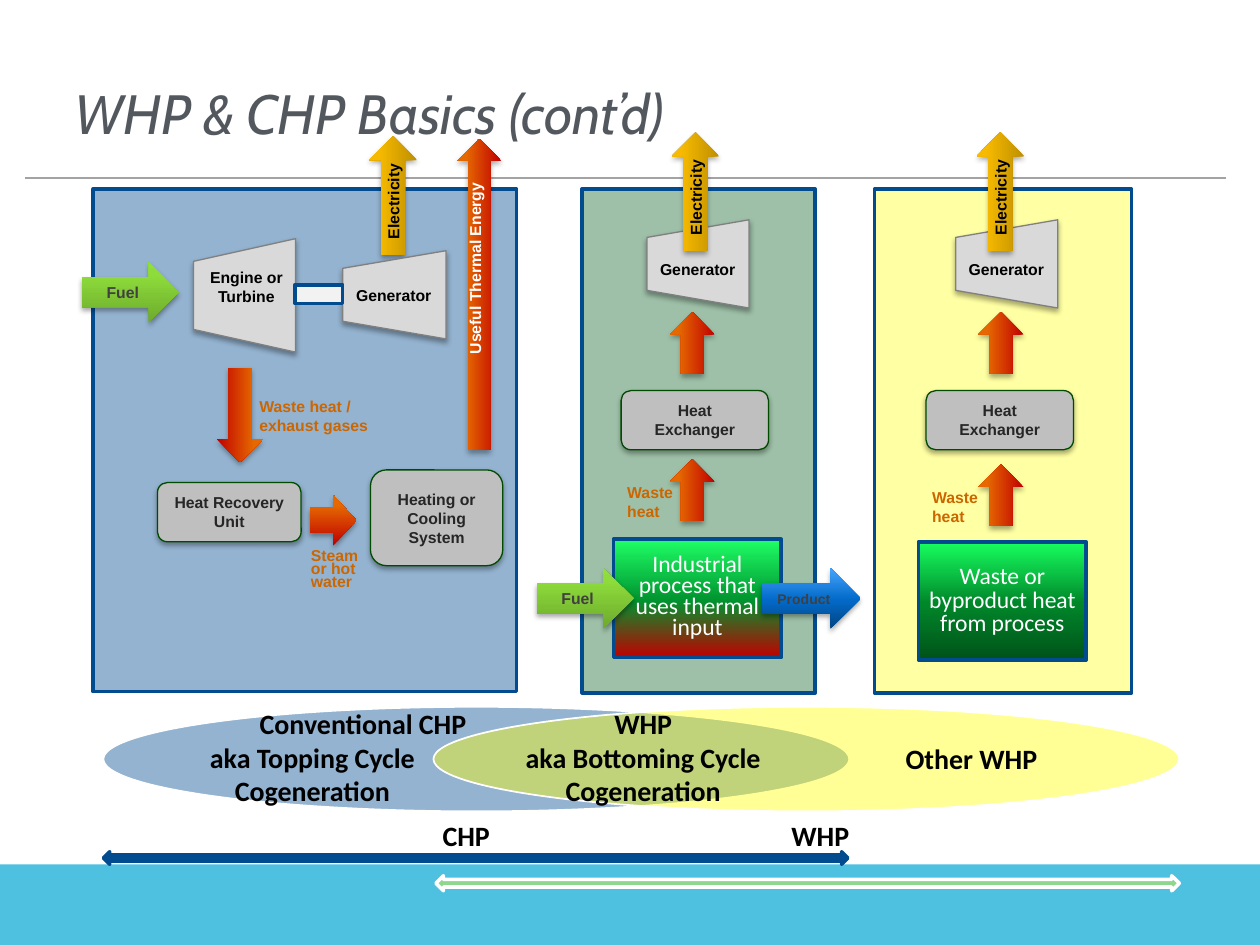
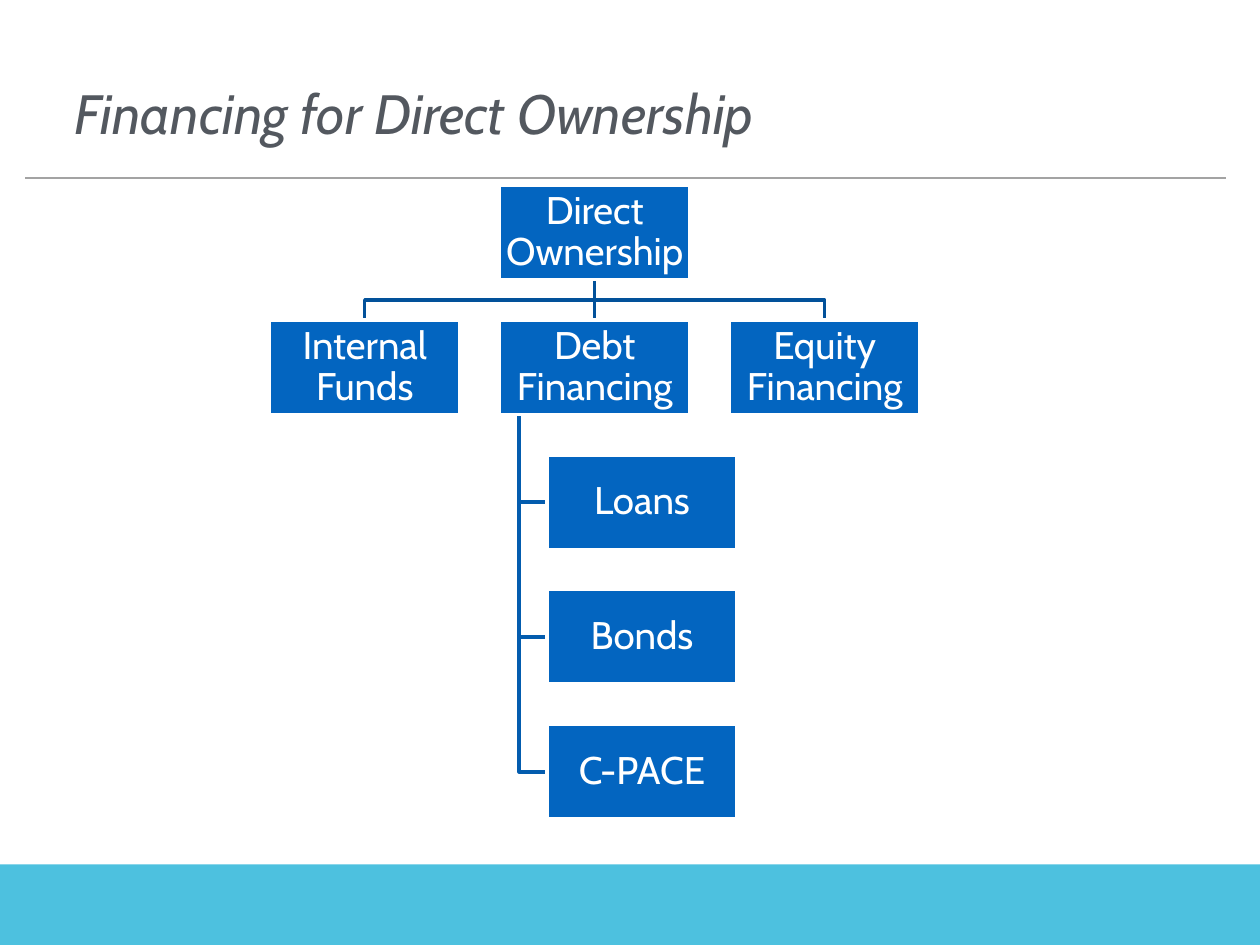
from dataclasses import dataclass
from typing import NamedTuple

from lxml.etree import SubElement
from pptx import Presentation
from pptx.dml.color import RGBColor
from pptx.enum.shapes import MSO_CONNECTOR, MSO_SHAPE
from pptx.enum.text import MSO_ANCHOR, PP_ALIGN
from pptx.oxml.ns import qn
from pptx.util import Inches, Pt


@dataclass(frozen=True)
class Theme:
    """Colours, gradients, fonts and type sizes of the deck."""
    band: str = "4DC1DF"
    rule: str = "A3A3A3"
    title: str = "53585F"
    white: str = "FFFFFF"
    black: str = "000000"
    navy: str = "024C90"
    edge: str = "024B8E"
    forest: str = "005C1C"
    yellow: str = "FFFF00"
    machine: str = "D9D9D9"
    machine_edge: str = "808080"
    unit: str = "BFBFBF"
    unit_edge: str = "004B00"
    unit_text: str = "262626"
    arrow_text: str = "404040"
    heat_text: str = "CC6600"
    shaft: str = "F2F2F2"
    node: str = "0365C0"
    trunk: str = "02519A"
    twig: str = "035CAE"
    heat: tuple = ((0, "C00000"), (80, "E56800"), (100, "E66800"))
    power: tuple = ((0, "BE8F00"), (80, "F7BA00"), (100, "F8BB00"))
    fuel: tuple = ((0, "6DAA2D"), (80, "8EDC3B"), (100, "8FE038"))
    product: tuple = ((0, "024481"), (48, "036AC9"), (100, "45A4FC"))
    industry: tuple = ((0, "C00000"), (48, "00932F"), (100, "1FFF66"))
    byproduct: tuple = ((0, "005219"), (48, "00872A"), (100, "17FF5F"))
    display: str = "Cabin"
    label: str = "Arial"
    body: str = "Calibri"
    title_size: float = 31.6
    node_size: float = 22
    cycle_size: float = 16
    process_size: float = 13.5
    label_size: float = 9
    small_size: float = 8


THEME = Theme()


class Box(NamedTuple):
    """A frame in inches."""
    left: float
    top: float
    width: float
    height: float

    def within(self, left, top, width, height):
        """Return a frame measured from this one's top left corner."""
        return Box(self.left + left, self.top + top, width, height)

    def emu(self):
        """Return the four lengths for a shape call."""
        return [Inches(value) for value in self]


def write(shape, text, size=THEME.label_size, font=THEME.label, color=THEME.black,
          bold=False, italic=False, align=PP_ALIGN.CENTER, first_align=None,
          anchor=MSO_ANCHOR.TOP, spacing=None, insets=(0.1, 0.05), wrap=True):
    """Fill a shape with text, one paragraph a line."""
    frame = shape.text_frame
    frame.word_wrap = wrap
    frame.vertical_anchor = anchor
    frame.margin_left = frame.margin_right = Inches(insets[0])
    frame.margin_top = frame.margin_bottom = Inches(insets[1])
    for index, line in enumerate(text.split("\n")):
        para = frame.add_paragraph() if index else frame.paragraphs[0]
        para.alignment = first_align if first_align and not index else align
        if spacing:
            para.line_spacing = spacing
        span = para.add_run()
        span.text = line
        span.font.name, span.font.size = font, Pt(size)
        span.font.bold, span.font.italic = bold, italic
        span.font.color.rgb = RGBColor.from_string(color)


def add_text(page, box, text, rotation=0, **style):
    """Add a text box."""
    shape = page.shapes.add_textbox(*box.emu())
    shape.rotation = rotation
    write(shape, text, **style)


def paint(shape, fill, alpha=None):
    """Fill a shape with a colour or with gradient stops rising upwards."""
    if isinstance(fill, str):
        shape.fill.solid()
        shape.fill.fore_color.rgb = RGBColor.from_string(fill)
        if alpha:
            color = next(shape._element.spPr.iter(qn("a:srgbClr")))
            SubElement(color, qn("a:alpha"), val=str(alpha * 1000))
        return
    shape.fill.gradient()
    shape.fill.gradient_angle = 90
    stops = next(shape._element.spPr.iter(qn("a:gsLst")))
    for stop in list(stops):
        stops.remove(stop)
    for position, color in fill:
        stop = SubElement(stops, qn("a:gs"), pos=str(position * 1000))
        SubElement(stop, qn("a:srgbClr"), val=color)


def outline(shape, color, width):
    """Give a shape or connector a solid line."""
    shape.line.color.rgb = RGBColor.from_string(color)
    shape.line.width = Pt(width)


def add_shape(page, kind, box, fill, alpha=None, edge=None, edge_width=2,
              rotation=0, shadow=False, text=None, **style):
    """Add a preset shape with its fill, line, shadow and text."""
    shape = page.shapes.add_shape(kind, *box.emu())
    shape.rotation = rotation
    paint(shape, fill, alpha)
    if edge:
        outline(shape, edge, edge_width)
    else:
        shape.line.fill.background()
    shape.shadow.inherit = False
    if shadow:
        effects = shape._element.spPr.find(qn("a:effectLst"))
        cast = SubElement(effects, qn("a:outerShdw"), blurRad=str(Pt(3.1)),
                          dist=str(Pt(1.8)), dir="5400000", rotWithShape="0")
        color = SubElement(cast, qn("a:srgbClr"), val=THEME.black)
        SubElement(color, qn("a:alpha"), val="35000")
    if text:
        write(shape, text, anchor=MSO_ANCHOR.MIDDLE, **style)
    return shape


def add_line(page, start, end, color, width):
    """Add a straight connector without shadow."""
    line = page.shapes.add_connector(
        MSO_CONNECTOR.STRAIGHT, *[Inches(value) for value in (*start, *end)])
    outline(line, color, width)
    SubElement(line._element.spPr, qn("a:effectLst"))
    return line


def add_arrow(page, box, fill, rotation=0, text=None, **style):
    """Add a shaded block arrow."""
    add_shape(page, MSO_SHAPE.RIGHT_ARROW, box, fill, rotation=rotation,
              shadow=True, text=text, bold=True, wrap=False, **style)


def add_electricity(page, box):
    """Add the upward arrow for generated power."""
    add_arrow(page, box, THEME.power, 270, "Electricity")


def add_fuel(page, box):
    """Add the arrow for fuel coming in."""
    add_arrow(page, box, THEME.fuel, text="Fuel", color=THEME.arrow_text)


def add_machine(page, box):
    """Add a trapezoid that widens to the right."""
    add_shape(page, MSO_SHAPE.FLOWCHART_MANUAL_OPERATION, box, THEME.machine,
              edge=THEME.machine_edge, edge_width=0.75, rotation=90, shadow=True)


def add_unit(page, box, text):
    """Add a rounded equipment box."""
    add_shape(page, MSO_SHAPE.ROUNDED_RECTANGLE, box, THEME.unit, edge=THEME.unit_edge,
              edge_width=0.75, shadow=True, text=text, color=THEME.unit_text, bold=True)


def add_heat_label(page, box, text, **style):
    """Add an orange label beside a heat arrow."""
    add_text(page, box, text, color=THEME.heat_text, bold=True,
             align=PP_ALIGN.LEFT, **style)


def add_panel(page, box, fill, alpha):
    """Add the tinted background of a system."""
    add_shape(page, MSO_SHAPE.RECTANGLE, box, fill, alpha, edge=THEME.edge)


def topping_panel(page, box):
    """Draw conventional CHP from fuel to thermal energy."""
    add_panel(page, box, THEME.navy, 42)
    add_unit(page, box.within(0.51, 2.33, 1.14, 0.47), "Heat Recovery Unit")
    add_unit(page, box.within(2.2, 2.23, 1.05, 0.76), "Heating or Cooling System")
    add_arrow(page, box.within(1.72, 2.43, 0.37, 0.4), THEME.heat)
    add_heat_label(page, box.within(1.63, 2.83, 0.64, 0.44), "Steam or hot water",
                   spacing=Pt(7.5))
    add_electricity(page, box.within(1.91, -0.14, 0.94, 0.38))
    add_machine(page, box.within(2.04, 0.43, 0.7, 0.82))
    add_text(page, box.within(1.97, 0.72, 0.83, 0.25), "Generator", bold=True)
    add_machine(page, box.within(0.75, 0.44, 0.9, 0.81))
    add_text(page, box.within(0.69, 0.58, 1.05, 0.4), "Engine or Turbine", bold=True)
    add_fuel(page, box.within(-0.09, 0.58, 0.77, 0.48))
    add_heat_label(page, box.within(1.22, 1.6, 1.38, 0.4), "Waste heat / exhaust gases")
    add_arrow(page, box.within(0.79, 1.61, 0.75, 0.37), THEME.heat, 90)
    add_arrow(page, box.within(1.83, 0.66, 2.47, 0.35), THEME.heat, 270)
    add_shape(page, MSO_SHAPE.RECTANGLE, box.within(1.6, 0.76, 0.38, 0.15),
              THEME.shaft, edge=THEME.edge)
    add_text(page, box.within(2.23, 0.48, 1.65, 0.21), "Useful Thermal Energy", 270,
             color=THEME.white, bold=True, align=PP_ALIGN.LEFT, spacing=Pt(7.5))


def waste_heat_panel(page, box, axis, fill, alpha, source, source_fill, spacing,
                     nudge=0, drop=0):
    """Draw a heat source, exchanger and generator stacked around an axis."""
    add_panel(page, box, fill, alpha)
    add_machine(page, box.within(axis - 0.33 + nudge, 0.19, 0.7, 0.81))
    add_unit(page, box.within(axis - 0.59, 1.6, 1.17, 0.47), "Heat Exchanger")
    add_text(page, box.within(axis - 0.38 + nudge, 0.51, 0.84, 0.25), "Generator",
             bold=True, align=PP_ALIGN.LEFT)
    add_heat_label(page, box.within(axis - 0.64, 2.28 + drop, 0.67, 0.4), "Waste heat")
    for top in (1.04, 2.21 + drop):
        add_arrow(page, box.within(axis - 0.27 + nudge, top, 0.49, 0.36), THEME.heat, 270)
    add_shape(page, MSO_SHAPE.RECTANGLE, box.within(axis - 0.65, 2.78 + drop / 2, 1.33, 0.94),
              source_fill, edge=THEME.edge, text=source, size=THEME.process_size,
              font=THEME.body, color=THEME.white, spacing=Pt(spacing), insets=(0.07, 0.04))
    add_electricity(page, box.within(axis - 0.47, -0.17, 0.94, 0.38))


def cycle_overlap(page, box):
    """Draw the overlapping ellipses and the spans below them."""
    style = dict(size=THEME.cycle_size, font=THEME.body, bold=True)
    for left, fill, alpha in ((0, THEME.navy, 42), (2.62, THEME.yellow, 41)):
        add_shape(page, MSO_SHAPE.OVAL, box.within(left, 0, 5.92, 0.83), fill, alpha,
                  edge=THEME.white, edge_width=1)
    add_text(page, box.within(0.34, 0.02, 2.64, 0.76),
             "Conventional CHP\naka Topping Cycle Cogeneration",
             first_align=PP_ALIGN.RIGHT, anchor=MSO_ANCHOR.MIDDLE, **style)
    add_text(page, box.within(2.88, 0.02, 2.81, 0.76),
             "WHP\naka Bottoming Cycle Cogeneration", anchor=MSO_ANCHOR.MIDDLE, **style)
    add_text(page, box.within(5.75, 0.25, 2.28, 0.31), "Other WHP",
             anchor=MSO_ANCHOR.MIDDLE, **style)
    add_shape(page, MSO_SHAPE.LEFT_RIGHT_ARROW, box.within(0, 1.15, 5.91, 0.1),
              THEME.navy, edge=THEME.edge)
    add_shape(page, MSO_SHAPE.LEFT_RIGHT_ARROW, box.within(2.64, 1.34, 5.9, 0.12),
              THEME.yellow, 36, edge=THEME.white)
    add_text(page, box.within(3.23, 0.84, 4.92, 0.37), "WHP", **style)
    add_text(page, box.within(-0.03, 0.84, 5.82, 0.37), "CHP", **style)


def add_node(page, box, text):
    """Add a box of the ownership tree."""
    return add_shape(page, MSO_SHAPE.RECTANGLE, box, THEME.node, edge=THEME.white,
                     text=text, size=THEME.node_size, font=THEME.display,
                     color=THEME.white, spacing=0.9, insets=(0.02, 0.02))


def add_branch(page, points, color):
    """Add an angled open line."""
    start, *rest = [(Inches(x), Inches(y)) for x, y in points]
    builder = page.shapes.build_freeform(*start)
    builder.add_line_segments(rest, close=False)
    branch = builder.convert_to_shape()
    branch.fill.background()
    outline(branch, color, 2)
    branch.shadow.inherit = False


def ownership_tree(page, box):
    """Draw the root, its three funding kinds and the debt instruments."""
    width, height, column, row = 1.51, 0.75, 1.825, 1.07
    middle = box.left + column + width / 2
    root_bottom, child_top = box.top + height, box.top + row
    for side in (-column, column):
        bend = (root_bottom + child_top) / 2
        add_branch(page, [(middle, root_bottom), (middle, bend),
                          (middle + side, bend), (middle + side, child_top)], THEME.trunk)
    trunk = add_line(page, (middle, root_bottom), (middle, child_top), THEME.trunk, 2)
    stem, leaf = box.left + 1.98, box.left + 2.2
    leaves = ["Loans", "Bonds", "C-PACE"]
    for level in range(2, 2 + len(leaves)):
        center = box.top + level * row + height / 2
        add_branch(page, [(stem, child_top + height), (stem, center), (leaf, center)],
                   THEME.twig)
    root = add_node(page, box.within(column, 0, width, height), "Direct Ownership")
    children = [add_node(page, box.within(index * column, row, width, height), text)
                for index, text in enumerate(
                    ["Internal Funds", "Debt Financing", "Equity Financing"])]
    for level, text in enumerate(leaves, 2):
        add_node(page, box.within(2.2, level * row, width, height), text)
    trunk.begin_connect(root, 2)
    trunk.end_connect(children[1], 0)


def add_page(deck, title):
    """Add a slide with the shared band, rule and title."""
    page = deck.slides.add_slide(deck.slide_layouts[6])
    add_shape(page, MSO_SHAPE.RECTANGLE, Box(0, 6.86, 10, 0.64), THEME.band)
    add_line(page, (0.2, 1.41), (9.73, 1.41), THEME.rule, 1)
    add_text(page, Box(0.49, 0.41, 8.44, 0.96), title, size=THEME.title_size,
             font=THEME.display, color=THEME.title, italic=True,
             align=PP_ALIGN.LEFT, anchor=MSO_ANCHOR.MIDDLE)
    return page


def basics_slide(deck):
    """Build the comparison of CHP and WHP systems."""
    page = add_page(deck, "WHP & CHP Basics (cont’d)")
    topping_panel(page, Box(0.74, 1.5, 3.36, 3.99))
    bottoming = Box(4.62, 1.5, 1.85, 4)
    waste_heat_panel(page, bottoming, 0.9, THEME.forest, 38,
                     "Industrial process that uses thermal input", THEME.industry, 12)
    add_fuel(page, bottoming.within(-0.36, 3.01, 0.77, 0.48))
    add_arrow(page, bottoming.within(1.43, 3.01, 0.78, 0.48), THEME.product,
              text="Product", size=THEME.small_size, color=THEME.arrow_text)
    waste_heat_panel(page, Box(6.94, 1.5, 2.04, 4), 1, THEME.yellow, 36,
                     "Waste or byproduct heat from process", THEME.byproduct, 13.5,
                     nudge=0.03, drop=0.04)
    cycle_overlap(page, Box(0.82, 5.61, 8.54, 1.46))


def financing_slide(deck):
    """Build the tree of financing choices."""
    page = add_page(deck, "Financing for Direct Ownership")
    ownership_tree(page, Box(2.14, 1.47, 5.16, 5.03))


def main():
    """Build and save the deck."""
    deck = Presentation()
    deck.slide_width, deck.slide_height = Inches(10), Inches(7.5)
    basics_slide(deck)
    financing_slide(deck)
    deck.save("out.pptx")


if __name__ == "__main__":
    main()
